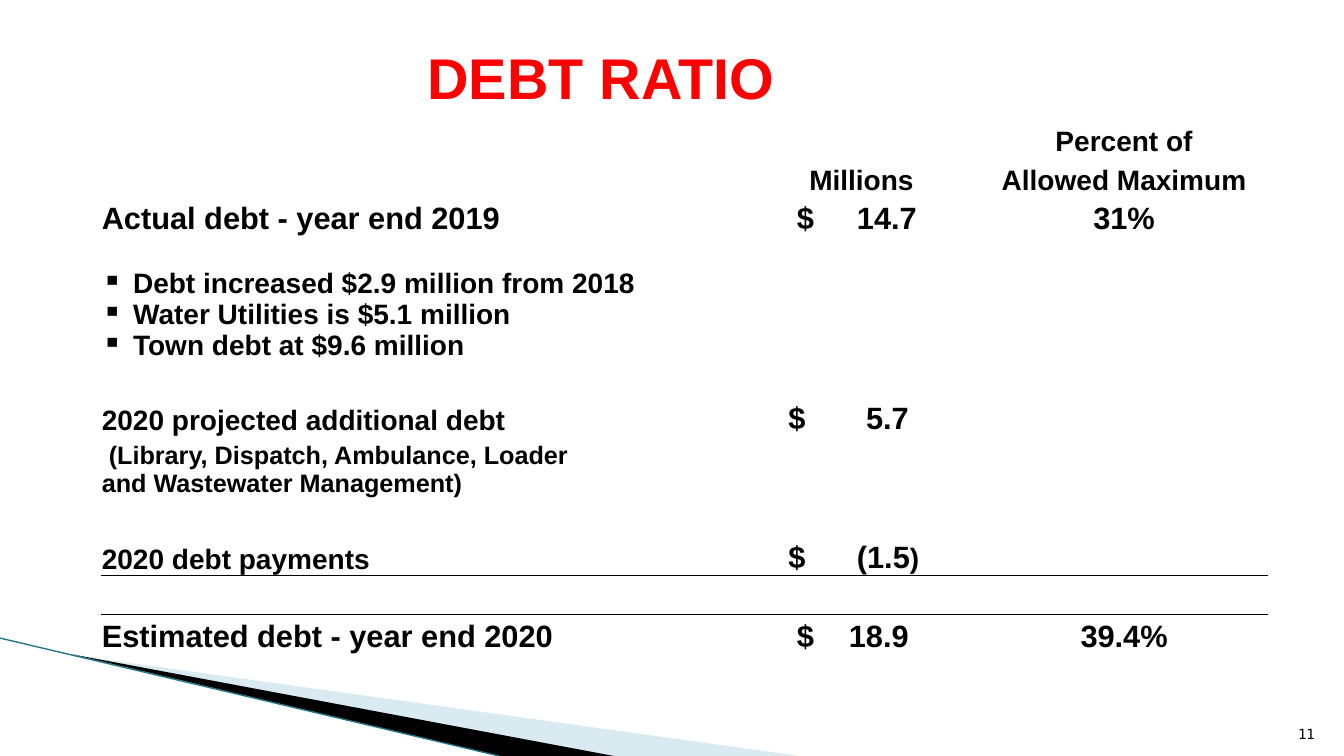
from lxml import etree
from pptx import Presentation
from pptx.dml.color import RGBColor
from pptx.enum.shapes import MSO_CONNECTOR as CONN
from pptx.enum.text import MSO_ANCHOR as ANCHOR, PP_ALIGN as ALIGN
from pptx.oxml.ns import qn
from pptx.util import Inches, Pt

BLACK = RGBColor(0x00, 0x00, 0x00)
RED = RGBColor(0xFF, 0x00, 0x00)
PALE_BLUE = RGBColor(0xA0, 0xCB, 0xDC)
TEAL = RGBColor(0x1F, 0x74, 0x86)
NO_GRID_STYLE = "{2D5ABB26-0587-4C30-8999-92F81FD0307C}"

COLS = [6.39, 0.42, 1.47, 0.44, 2.86]
ROWS = [0.39, 0.39, 0.39, 1.6, 0.39, 0.61, 0.39, 0.38, 0.39, 0.39, 0.39]
LABEL, AMOUNT, PERCENT = 0, 2, 4
LAST_PAYMENT_ROW = 7

HEADINGS = [
    (0, PERCENT, "Percent of"),
    (1, AMOUNT, "Millions"),
    (1, PERCENT, "Allowed Maximum"),
]
LABELS = [
    (2, ["Actual debt - year end 2019"], 22),
    (4, ["2020 projected additional debt"], 20),
    (5, [" (Library, Dispatch, Ambulance, Loader", "and Wastewater Management)"], 18),
    (7, ["2020 debt payments"], 20),
    (9, ["Estimated debt - year end 2020"], 22),
]
BULLETS = [
    "Debt increased $2.9 million from 2018",
    "Water Utilities is $5.1 million",
    "Town debt at $9.6 million",
]
AMOUNTS = [
    (2, " $", [("14.7", 22)], 0.68),
    (4, "$", [("5.7", 22)], 0.77),
    (7, "$", [("(1.5", 22), (")", 20)], 0.68),
    (9, " $", [("18.9", 22)], 0.6),
]
PERCENTS = [(2, "31%"), (9, "39.4%")]


class SlideBuilder:
    def __init__(self, prs):
        self.s = prs.slides.add_slide(prs.slide_layouts[6])
        self.style = {"name": "Arial", "bold": True}

    def run(self, p, text, **fmt):
        r = p.add_run()
        r.text = text
        fmt = {**self.style, **fmt}
        r.font.color.rgb = fmt.pop("color", BLACK)
        for key, value in fmt.items():
            setattr(r.font, key, Pt(value) if key == "size" else value)

    def text(self, box, text, align, anchor, **fmt):
        tf = self.s.shapes.add_textbox(*map(Inches, box)).text_frame
        tf.word_wrap = True
        tf.vertical_anchor = anchor
        p = tf.paragraphs[0]
        p.alignment = align
        self.run(p, text, **fmt)

    def wedge(self, points, color, alpha=None):
        start, *rest = [(Inches(x), Inches(y)) for x, y in points]
        fb = self.s.shapes.build_freeform(*start)
        fb.add_line_segments(rest, close=True)
        sp = fb.convert_to_shape()
        sp.shadow.inherit = False
        sp.line.fill.background()
        sp.fill.solid()
        sp.fill.fore_color.rgb = color
        if alpha:
            clr = sp._element.spPr.find(".//" + qn("a:srgbClr"))
            etree.SubElement(clr, qn("a:alpha"), val=str(alpha * 1000))

    def line(self, start, end, color, width):
        ends = map(Inches, (*start, *end))
        cx = self.s.shapes.add_connector(CONN.STRAIGHT, *ends)
        cx.line.color.rgb = color
        cx.line.width = Pt(width)
        etree.SubElement(cx._element.spPr, qn("a:effectLst"))

    def table(self, left, top, cols, rows):
        size = map(Inches, (left, top, sum(cols), sum(rows)))
        table = self.s.shapes.add_table(len(rows), len(cols), *size).table
        table.first_row = table.horz_banding = False
        table._tbl.tblPr.find(qn("a:tableStyleId")).text = NO_GRID_STYLE
        for col, width in zip(table.columns, cols):
            col.width = Inches(width)
        for row, height in zip(table.rows, rows):
            row.height = Inches(height)
        margins = {"margin_left": 0.01, "margin_right": 0.01,
                   "margin_top": 0.01, "margin_bottom": 0}
        for cell in table.iter_cells():
            for key, value in margins.items():
                setattr(cell, key, Inches(value))
            cell.vertical_anchor = ANCHOR.BOTTOM
            cell.fill.background()
        return table

    def cell(self, cell, lines, size, align=ALIGN.LEFT, bullet=None):
        tf = cell.text_frame
        for i, text in enumerate(lines):
            p = tf.add_paragraph() if i else tf.paragraphs[0]
            p.alignment = align
            if bullet:
                pPr = p._p.get_or_add_pPr()
                pPr.set("marL", str(Inches(0.31)))
                pPr.set("indent", str(-Inches(0.31)))
                etree.SubElement(pPr, qn("a:buChar"), char=bullet)
            self.run(p, text, size=size)

    def amount(self, cell, sign, parts, tab):
        p = cell.text_frame.paragraphs[0]
        tabs = etree.SubElement(p._p.get_or_add_pPr(), qn("a:tabLst"))
        etree.SubElement(tabs, qn("a:tab"), pos=str(Inches(tab)), algn="l")
        self.run(p, sign + "\t", size=22)
        for text, size in parts:
            self.run(p, text, size=size)

    def border(self, cell, side, color, width):
        ln = etree.Element(qn("a:" + side), w=str(Pt(width)))
        fill = etree.SubElement(ln, qn("a:solidFill"))
        etree.SubElement(fill, qn("a:srgbClr"), val=str(color))
        cell._tc.get_or_add_tcPr().insert(0, ln)


def main():
    prs = Presentation()
    prs.slide_width, prs.slide_height = Inches(13.33), Inches(7.5)
    sb = SlideBuilder(prs)

    sb.wedge([(0.73, 6.5), (7.93, 7.5), (6.08, 7.5)], PALE_BLUE, 40)
    sb.wedge([(0.71, 6.49), (6.09, 7.5), (4.96, 7.5)], BLACK)
    sb.line((0, 6.33), (4.95, 7.5), TEAL, 0.95)

    debt = sb.table(1, 1.17, COLS, ROWS)
    for row, col, text in HEADINGS:
        sb.cell(debt.cell(row, col), [text], 20, ALIGN.CENTER)
    for row, lines, size in LABELS:
        sb.cell(debt.cell(row, LABEL), lines, size)
    changes = debt.cell(3, LABEL)
    sb.cell(changes, BULLETS, 20, bullet="▪")
    changes.margin_bottom = Inches(0.35)
    for row, *amount in AMOUNTS:
        sb.amount(debt.cell(row, AMOUNT), *amount)
    for row, text in PERCENTS:
        sb.cell(debt.cell(row, PERCENT), [text], 22, ALIGN.CENTER)
    for col in range(len(COLS)):
        sb.border(debt.cell(LAST_PAYMENT_ROW, col), "lnB", BLACK, 0.5)
        sb.border(debt.cell(LAST_PAYMENT_ROW + 1, col), "lnT", BLACK, 0.5)

    sb.text((0.67, 0.35, 10.58, 0.82), "DEBT RATIO", ALIGN.CENTER,
            ANCHOR.MIDDLE, size=41, color=RED)
    sb.text((12.61, 7.01, 0.53, 0.4), "11", ALIGN.RIGHT, ANCHOR.BOTTOM,
            size=10, name="DejaVu Sans Mono", bold=False)
    prs.save("out.pptx")


if __name__ == "__main__":
    main()
